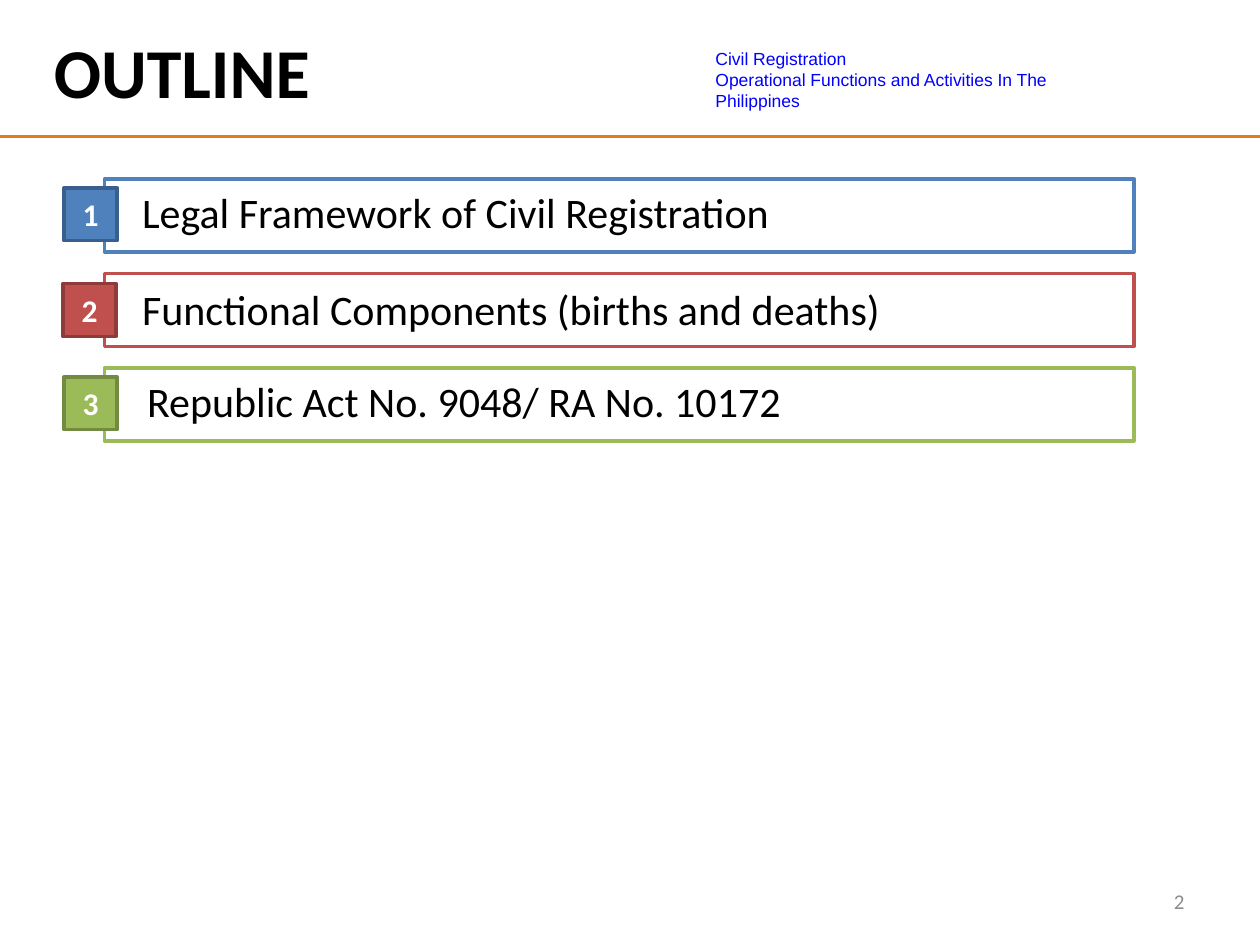
from dataclasses import dataclass

from lxml import etree
from pptx import Presentation
from pptx.dml.color import RGBColor
from pptx.enum.shapes import MSO_CONNECTOR, MSO_SHAPE
from pptx.enum.text import MSO_ANCHOR, PP_ALIGN
from pptx.oxml.ns import qn
from pptx.util import Inches, Pt

LEFT, MID, RIGHT = PP_ALIGN.LEFT, PP_ALIGN.CENTER, PP_ALIGN.RIGHT
TOP, CENTER = MSO_ANCHOR.TOP, MSO_ANCHOR.MIDDLE
RECT, LINE = MSO_SHAPE.RECTANGLE, MSO_CONNECTOR.STRAIGHT
WIDE, HIGH = 10, 7.5


@dataclass(frozen=True)
class Theme:
    head: str = "Calibri"
    note: str = "Arial"
    ink: str = "000000"
    paper: str = "FFFFFF"
    link: str = "0000FF"
    gray: str = "8C8C8C"
    rule: str = "E17B1C"
    title: int = 40
    body: int = 24
    badge: int = 18
    foot: int = 12
    small: int = 10
    edge: float = 2
    thin: float = 1.65


THEME = Theme()

# Label, main colour, badge edge, badge shift (x, y), label shift (x, y)
ITEMS = [
    ("Legal Framework of Civil Registration",
     "4F81BD", "3A5F8C", (0.01, 0), (0, 0)),
    ("Functional Components (births and deaths)",
     "C0504D", "8E3B39", (0, 0.01), (0, 0.02)),
    ("Republic Act No. 9048/ RA No. 10172",
     "9BBB59", "738A42", (0.01, 0), (0.04, 0)),
]


def color(code):
    return RGBColor.from_string(code)


def write(shape, lines, size, ink, font=THEME.head, bold=False,
          align=LEFT, anchor=TOP):
    """Put lines, parted by line breaks, in one paragraph."""
    frame = shape.text_frame
    frame.word_wrap = True
    frame.vertical_anchor = anchor
    para = frame.paragraphs[0]
    para.alignment = align
    for i, line in enumerate(lines):
        if i:
            para.add_line_break()
        run = para.add_run()
        run.text = line
        run.font.name = font
        run.font.size = Pt(size)
        run.font.bold = bold
        run.font.color.rgb = color(ink)


def label(slide, box, lines, size, ink, **style):
    shape = slide.shapes.add_textbox(*map(Inches, box))
    write(shape, lines, size, ink, **style)


def block(slide, box, fill, edge):
    shape = slide.shapes.add_shape(RECT, *map(Inches, box))
    shape.shadow.inherit = False
    shape.fill.solid()
    shape.fill.fore_color.rgb = color(fill)
    shape.line.color.rgb = color(edge)
    shape.line.width = Pt(THEME.edge)
    return shape


def header(slide, box):
    x, y, w, h = box
    # Rule along the lower edge
    ends = (x, y + h, x + w, y + h)
    rule = slide.shapes.add_connector(LINE, *map(Inches, ends))
    rule.line.color.rgb = color(THEME.rule)
    rule.line.width = Pt(THEME.thin)
    etree.SubElement(rule._element.spPr, qn("a:effectLst"))
    # Title and topic
    label(slide, (x + 0.33, y + 0.18, w * 0.25, 0.77), ["OUTLINE"],
          THEME.title, THEME.ink, bold=True)
    label(slide, (x + 5.58, y + 0.33, 2.92, 0.61),
          ["Civil Registration",
           "Operational Functions and Activities In The Philippines"],
          THEME.small, THEME.link, font=THEME.note)


def entry(slide, box, num, item):
    x, y, w, h = box
    name, main, dark, (bx, by), (tx, ty) = item
    side = 0.42
    # Frame, then the badge over its left edge
    block(slide, box, THEME.paper, main)
    badge = block(slide, (x - 0.33 + bx, y + 0.07 + by, side, side),
                  main, dark)
    write(badge, [str(num)], THEME.badge, THEME.paper, bold=True,
          align=MID, anchor=CENTER)
    label(slide, (x + 0.2 + tx, y + 0.01 + ty, w - 0.4, 0.5), [name],
          THEME.body, THEME.ink)


def outline(slide, box):
    x, y, w, h = box
    step = h / len(ITEMS)
    for i, item in enumerate(ITEMS):
        entry(slide, (x, y + i * step, w, 0.58), i + 1, item)


def footer(slide, box):
    label(slide, box, ["2"], THEME.foot, THEME.gray,
          align=RIGHT, anchor=CENTER)


def main():
    deck = Presentation()
    deck.slide_width, deck.slide_height = Inches(WIDE), Inches(HIGH)
    slide = deck.slides.add_slide(deck.slide_layouts[6])
    header(slide, (0, 0, WIDE, 1.08))
    outline(slide, (0.83, 1.42, 8.17, HIGH * 0.3))
    footer(slide, (7.17, 6.95, 2.33, 0.4))
    deck.save("out.pptx")


if __name__ == "__main__":
    main()
